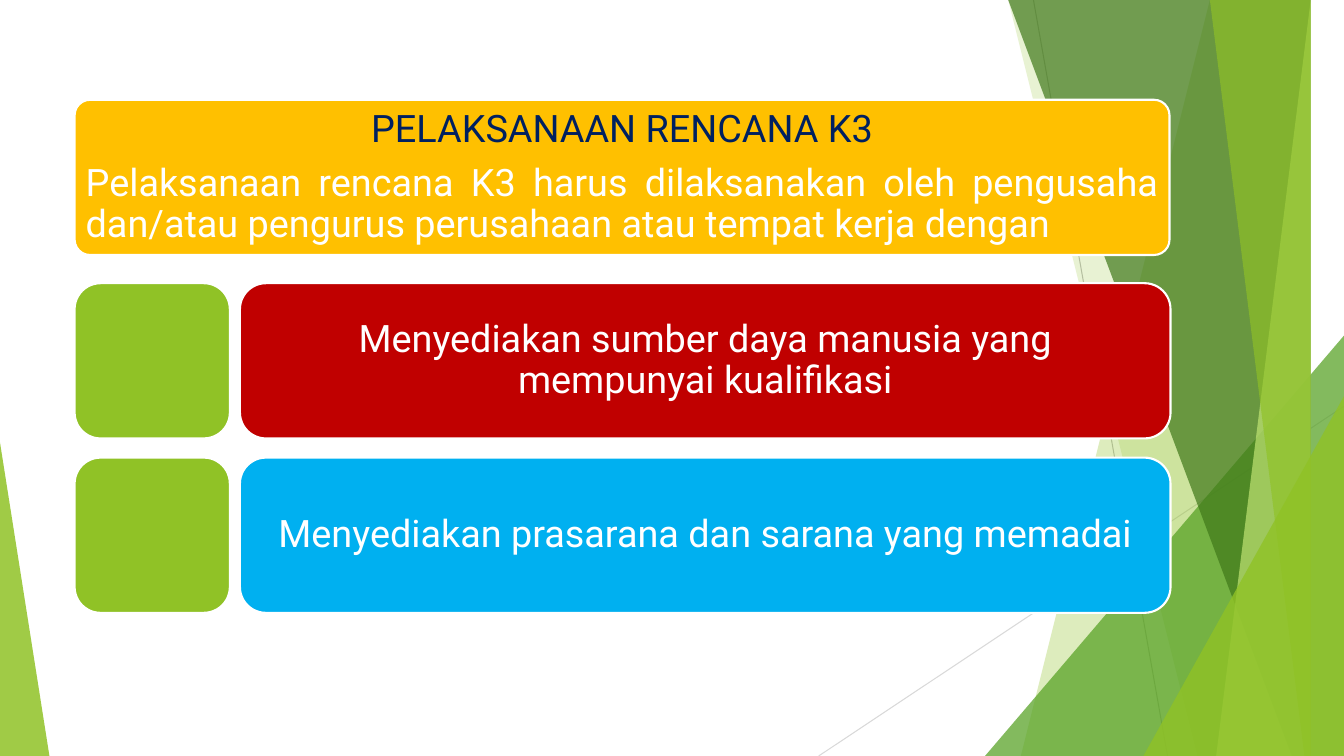
from dataclasses import dataclass

from lxml.etree import SubElement
from pptx import Presentation
from pptx.dml.color import RGBColor
from pptx.enum.shapes import MSO_CONNECTOR, MSO_SHAPE
from pptx.enum.text import MSO_ANCHOR, MSO_AUTO_SIZE, PP_ALIGN
from pptx.oxml.ns import qn
from pptx.util import Inches, Pt


@dataclass(frozen=True)
class Theme:
    font: str = "Roboto"
    size: int = 27
    line_spacing: float = 0.9
    space_after: float = 0.35
    white: str = "FFFFFF"
    navy: str = "002060"
    amber: str = "FFC000"
    red: str = "C00000"
    blue: str = "00B0F0"
    lime: str = "90C226"
    pale_lime: str = "C0E474"
    green: str = "54A021"
    dark_green: str = "3F7819"
    gray: str = "BFBFBF"
    light_gray: str = "D9D9D9"


THEME = Theme()
WIDTH, HEIGHT = 13.33, 7.5

HEADING = "PELAKSANAAN RENCANA K3"
INTRODUCTION = (
    "Pelaksanaan rencana K3 harus dilaksanakan oleh pengusaha "
    "dan/atau pengurus perusahaan atau tempat kerja dengan"
)
STEPS = [
    ("Menyediakan sumber daya manusia yang mempunyai kualifikasi", THEME.red),
    ("Menyediakan prasarana dan sarana yang memadai", THEME.blue),
]

RAYS = [
    ((10.25, 0), (11.58, HEIGHT), THEME.gray),
    ((WIDTH, 4.03), (8.12, HEIGHT), THEME.light_gray),
]
# Bands reach the right edge: (left at top, left at bottom, colour, opacity %)
BACK_BANDS = [(12.28, 10.04, THEME.lime, 30), (10.5, 11.83, THEME.lime, 20)]
FRONT_BANDS = [
    (10.21, 12.91, THEME.dark_green, 70),
    (13.03, 11.92, THEME.pale_lime, 70),
    (11.96, 13.18, THEME.lime, 65),
]
# Triangles stand on the bottom edge: (left, top, width, apex, colour, opacity %)
BACK_TRIANGLE = (9.77, 3.33, 3.56, 1, THEME.green, 72)
FRONT_TRIANGLES = [
    (11.34, 3.93, 1.99, 1, THEME.lime, 80),
    (0, 4.39, 0.49, 0, THEME.lime, 85),
]

LEFT, BANNER_TOP, BANNER_WIDTH = 0.74, 0.99, 10.86
ROW_HEIGHT = 1.54
STEPS_TOP, ROW_PITCH = 2.81, 1.73
CARD_LEFT, CARD_WIDTH = 2.38, 9.23
TITLE_INSET = 0.05


def paint(shape, color, opacity=100):
    shape.shadow.inherit = False
    shape.fill.solid()
    shape.fill.fore_color.rgb = RGBColor.from_string(color)
    if opacity < 100:
        color_node = shape.fill._xPr.find(qn("a:solidFill"))[0]
        SubElement(color_node, qn("a:alpha"), val=str(opacity * 1000))


def add_ray(slide, start, end, color):
    ray = slide.shapes.add_connector(
        MSO_CONNECTOR.STRAIGHT, *(Inches(value) for value in start + end)
    )
    ray.line.color.rgb = RGBColor.from_string(color)
    ray.line.width = Pt(0.75)
    SubElement(ray.element.spPr, qn("a:effectLst"))


def add_band(slide, top_left, bottom_left, color, opacity):
    top = -0.01
    builder = slide.shapes.build_freeform(top_left, top, scale=Inches(1))
    builder.add_line_segments([(WIDTH, top), (WIDTH, HEIGHT), (bottom_left, HEIGHT)])
    band = builder.convert_to_shape()
    paint(band, color, opacity)
    band.line.fill.background()


def add_triangle(slide, left, top, width, apex, color, opacity):
    triangle = slide.shapes.add_shape(
        MSO_SHAPE.ISOSCELES_TRIANGLE,
        Inches(left), Inches(top), Inches(width), Inches(HEIGHT - top),
    )
    triangle.adjustments[0] = apex
    paint(triangle, color, opacity)
    triangle.line.fill.background()


def add_card(slide, left, top, width, color, rounding=0.167):
    card = slide.shapes.add_shape(
        MSO_SHAPE.ROUNDED_RECTANGLE,
        Inches(left), Inches(top), Inches(width), Inches(ROW_HEIGHT),
    )
    card.adjustments[0] = rounding
    paint(card, color)
    card.line.color.rgb = RGBColor.from_string(THEME.white)
    card.line.width = Pt(1.5)
    return card


def write(shape, paragraphs, inset_x, inset_y):
    """Fill a shape with (text, alignment, colour) paragraphs."""
    frame = shape.text_frame
    frame.word_wrap = True
    frame.auto_size = MSO_AUTO_SIZE.NONE
    frame.vertical_anchor = MSO_ANCHOR.MIDDLE
    frame.margin_left = frame.margin_right = Inches(inset_x)
    frame.margin_top = frame.margin_bottom = Inches(inset_y)
    for index, (text, alignment, color) in enumerate(paragraphs):
        paragraph = frame.add_paragraph() if index else frame.paragraphs[0]
        paragraph.alignment = alignment
        paragraph.line_spacing = THEME.line_spacing
        paragraph.space_before = Pt(0)
        paragraph.space_after = Pt(THEME.size * THEME.space_after)
        run = paragraph.add_run()
        run.text = text
        run.font.name = THEME.font
        run.font.size = Pt(THEME.size)
        run.font.color.rgb = RGBColor.from_string(color)


def add_backdrop(slide):
    for ray in RAYS:
        add_ray(slide, *ray)
    for band in BACK_BANDS:
        add_band(slide, *band)
    add_triangle(slide, *BACK_TRIANGLE)
    for band in FRONT_BANDS:
        add_band(slide, *band)
    for triangle in FRONT_TRIANGLES:
        add_triangle(slide, *triangle)


def add_banner(slide):
    banner = add_card(slide, LEFT, BANNER_TOP, BANNER_WIDTH, THEME.amber, 0.1)
    title = slide.shapes.title
    title.left, title.top = Inches(LEFT + TITLE_INSET), Inches(BANNER_TOP + TITLE_INSET)
    title.width = Inches(BANNER_WIDTH - 2 * TITLE_INSET)
    title.height = Inches(ROW_HEIGHT - 2 * TITLE_INSET)
    banner.element.addnext(title.element)
    write(title, [
        (HEADING, PP_ALIGN.CENTER, THEME.navy),
        (INTRODUCTION, PP_ALIGN.JUSTIFY, THEME.white),
    ], 0.06, 0.04)


def add_steps(slide):
    for row, (text, color) in enumerate(STEPS):
        top = STEPS_TOP + row * ROW_PITCH
        add_card(slide, LEFT, top, ROW_HEIGHT, THEME.lime)
        card = add_card(slide, CARD_LEFT, top, CARD_WIDTH, color)
        write(card, [(text, PP_ALIGN.CENTER, THEME.white)], 0.21, 0.21)


def main():
    presentation = Presentation()
    presentation.slide_width = Inches(WIDTH)
    presentation.slide_height = Inches(HEIGHT)
    slide = presentation.slides.add_slide(presentation.slide_layouts[5])
    add_backdrop(slide)
    add_banner(slide)
    add_steps(slide)
    presentation.save("out.pptx")


if __name__ == "__main__":
    main()
